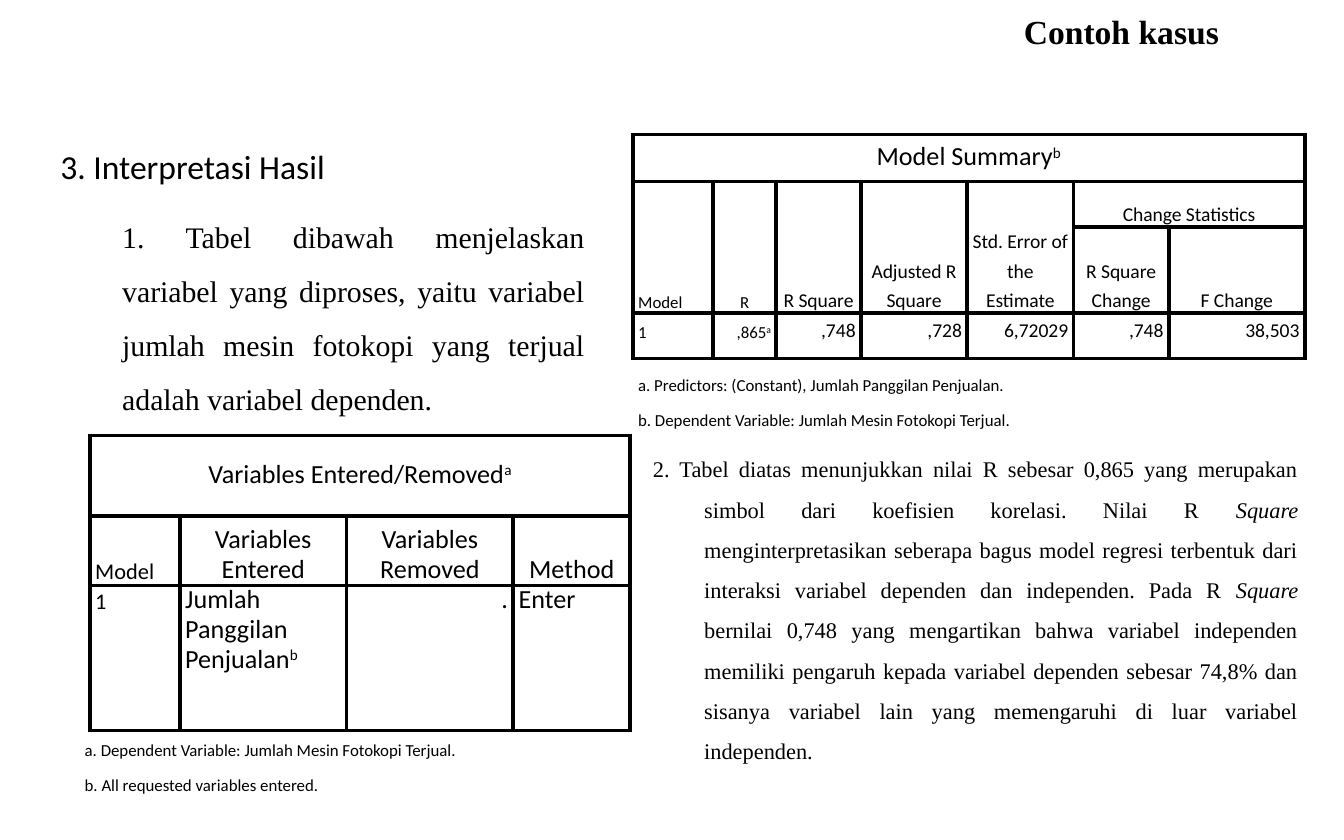
"""Build a slide on reading regression output, with its tables and notes."""
from dataclasses import dataclass

import lxml.etree
import pptx
import pptx.dml.color
import pptx.enum.text
import pptx.oxml.ns
import pptx.util

Cm = pptx.util.Cm
Pt = pptx.util.Pt
ALIGN = pptx.enum.text.PP_ALIGN
ANCHOR = pptx.enum.text.MSO_ANCHOR
qn = pptx.oxml.ns.qn
BLACK = pptx.dml.color.RGBColor(0, 0, 0)
SERIF = "Times New Roman"
SANS = "Calibri"


@dataclass
class Box:
    """A text box; text between bars is italic."""
    left: float
    top: float
    width: float
    height: float
    text: str
    size: float
    face: str = SERIF
    bold: bool = False
    hang: bool = False


@dataclass
class Cell:
    """A table cell; text after a bar is superscript."""
    row: int
    col: int
    text: str
    size: float
    align: ALIGN = ALIGN.LEFT
    anchor: ANCHOR = ANCHOR.TOP
    down: int = 1
    across: int = 1


@dataclass
class Grid:
    """A table with column widths and row heights."""
    left: float
    top: float
    cols: list[float]
    rows: list[float]
    cells: list[Cell]
    line: float = 2.25


def head(row: int, col: int, text: str, size: float, **more) -> Cell:
    """Make a centred heading cell that sits at the bottom."""
    return Cell(row, col, text, size, ALIGN.CENTER, ANCHOR.BOTTOM, **more)


def notes(left: float, top: float, width: float, *lines: str) -> Grid:
    """Make a table of footnotes without borders."""
    cells = [Cell(row, 0, line, 9) for row, line in enumerate(lines)]
    return Grid(left, top, [width], [0.66] * len(lines), cells, 0)


def style(para, face: str, size: float, bold: bool = False) -> None:
    """Set the font of a paragraph."""
    font = para.font
    font.name, font.size, font.bold = face, Pt(size), bold
    font.color.rgb = BLACK


def write(para, text: str, raised: bool) -> None:
    """Add runs, marking every second piece."""
    for index, piece in enumerate(text.split("|")):
        run = para.add_run()
        run.text = piece
        if index % 2 and raised:
            run._r.get_or_add_rPr().set("baseline", "30000")
        elif index % 2:
            run.font.italic = True


def draw_box(slide, box: Box) -> None:
    """Draw a text box."""
    shape = slide.shapes.add_textbox(
        Cm(box.left), Cm(box.top), Cm(box.width), Cm(box.height))
    frame = shape.text_frame
    frame.word_wrap = True
    frame.auto_size = pptx.enum.text.MSO_AUTO_SIZE.SHAPE_TO_FIT_TEXT
    para = frame.paragraphs[0]
    para.alignment = ALIGN.LEFT
    if box.hang:
        para.alignment = ALIGN.JUSTIFY
        para.line_spacing = 1.5
        para.space_after = Pt(8)
        props = para._p.get_or_add_pPr()
        props.set("marL", str(Cm(0.97)))
        props.set("indent", str(-Cm(0.97)))
        tabs = lxml.etree.SubElement(props, qn("a:tabLst"))
        lxml.etree.SubElement(
            tabs, qn("a:tab"), pos=str(Cm(1.27)), algn="l")
    style(para, box.face, box.size, box.bold)
    write(para, box.text, False)


def rule(cell, width: float) -> None:
    """Set all four borders of a cell, or none at zero width."""
    props = cell._tc.get_or_add_tcPr()
    for index, side in enumerate(("lnL", "lnR", "lnT", "lnB")):
        line = lxml.etree.Element(qn(f"a:{side}"), w=str(Pt(width)))
        if width:
            fill = lxml.etree.SubElement(line, qn("a:solidFill"))
            lxml.etree.SubElement(fill, qn("a:srgbClr"), val=str(BLACK))
        else:
            lxml.etree.SubElement(line, qn("a:noFill"))
        props.insert(index, line)


def draw_grid(slide, grid: Grid) -> None:
    """Draw a table."""
    table = slide.shapes.add_table(
        len(grid.rows), len(grid.cols), Cm(grid.left), Cm(grid.top),
        Cm(sum(grid.cols)), Cm(sum(grid.rows))).table
    table.first_row = table.horz_banding = False
    for col, width in zip(table.columns, grid.cols):
        col.width = Cm(width)
    for row, height in zip(table.rows, grid.rows):
        row.height = Cm(height)
    for cell in table.iter_cells():
        cell.margin_left = cell.margin_right = 0
        cell.margin_top = cell.margin_bottom = 0
        cell.fill.background()
        rule(cell, grid.line)
    for item in grid.cells:
        cell = table.cell(item.row, item.col)
        if item.down * item.across > 1:
            cell.merge(table.cell(item.row + item.down - 1,
                                  item.col + item.across - 1))
        cell.vertical_anchor = item.anchor
        para = cell.text_frame.paragraphs[0]
        para.alignment = item.align
        para.line_spacing = Pt(16)
        para.space_after = Pt(8)
        props = para._p.get_or_add_pPr()
        for side in ("marL", "marR"):
            props.set(side, str(Cm(0.1)))
        props.set("indent", "0")
        style(para, SANS, item.size)
        write(para, item.text, True)


MID = (ALIGN.CENTER, ANCHOR.MIDDLE)
LOW = (ALIGN.LEFT, ANCHOR.BOTTOM)
ENTRY = Grid(1.7, 8.23, [1.7, 3.15, 3.15, 2.21], [1.52, 1.32, 2.74], [
    Cell(0, 0, "Variables Entered/Removed|a", 14, *MID, across=4),
    Cell(1, 0, "Model", 12, *LOW),
    *(head(1, col, text, 14) for col, text in enumerate(
        ("Variables Entered", "Variables Removed", "Method"), 1)),
    Cell(2, 0, "1", 12),
    Cell(2, 1, "Jumlah Panggilan Penjualan|b", 14),
    Cell(2, 2, ".", 14, ALIGN.RIGHT),
    Cell(2, 3, "Enter", 14),
])
MODEL = Grid(11.96, 2.54, [1.52, 1.19, 1.6, 2.01, 2.01, 1.8, 2.57],
             [0.89, 0.86, 1.63, 0.86], [
    Cell(0, 0, "Model Summary|b", 14, *MID, across=7),
    Cell(1, 0, "Model", 9, *LOW, down=2),
    head(1, 1, "R", 9, down=2),
    *(head(1, col, text, 10.5, down=2) for col, text in enumerate(
        ("R Square", "Adjusted R Square", "Std. Error of the Estimate"), 2)),
    head(1, 5, "Change Statistics", 10.5, across=2),
    head(2, 5, "R Square Change", 10.5),
    head(2, 6, "F Change", 10.5),
    Cell(3, 0, "1", 9),
    Cell(3, 1, ",865|a", 9, ALIGN.RIGHT),
    *(Cell(3, col, text, 10.5, ALIGN.RIGHT) for col, text in enumerate(
        (",748", ",728", "6,72029", ",748", "38,503"), 2)),
])
GRIDS = [
    ENTRY, MODEL,
    notes(1.5, 13.82, 8.74,
          "a. Dependent Variable: Jumlah Mesin Fotokopi Terjual.",
          "b. All requested variables entered."),
    notes(11.96, 6.93, 11.33,
          "a. Predictors: (Constant), Jumlah Panggilan Penjualan.",
          "b. Dependent Variable: Jumlah Mesin Fotokopi Terjual."),
]
BOXES = [
    Box(19.1, 0.08, 6.2, 1.02, "Contoh kasus", 18, bold=True),
    Box(0.89, 2.64, 6.2, 1.02, "3. Interpretasi Hasil", 18, SANS),
    Box(1.09, 3.68, 10.21, 4.24, "\t1. Tabel dibawah menjelaskan variabel yang diproses, yaitu variabel jumlah mesin fotokopi yang terjual adalah variabel dependen.", 16, hang=True),
    Box(12.09, 8.23, 12.7, 6.32, "2. Tabel diatas menunjukkan nilai R sebesar 0,865 yang merupakan simbol dari koefisien korelasi. Nilai R |Square |menginterpretasikan seberapa bagus model regresi terbentuk dari interaksi variabel dependen dan independen. Pada R |Square |bernilai 0,748 yang mengartikan bahwa variabel independen memiliki pengaruh kepada variabel dependen sebesar 74,8% dan sisanya variabel lain yang memengaruhi di luar variabel independen.", 12, hang=True),
]


def main() -> None:
    """Build and save the slide."""
    deck = pptx.Presentation()
    deck.slide_width, deck.slide_height = Cm(25.4), Cm(15.88)
    slide = deck.slides.add_slide(deck.slide_layouts[6])
    for grid in GRIDS:
        draw_grid(slide, grid)
    for box in BOXES:
        draw_box(slide, box)
    deck.save("out.pptx")


if __name__ == "__main__":
    main()
